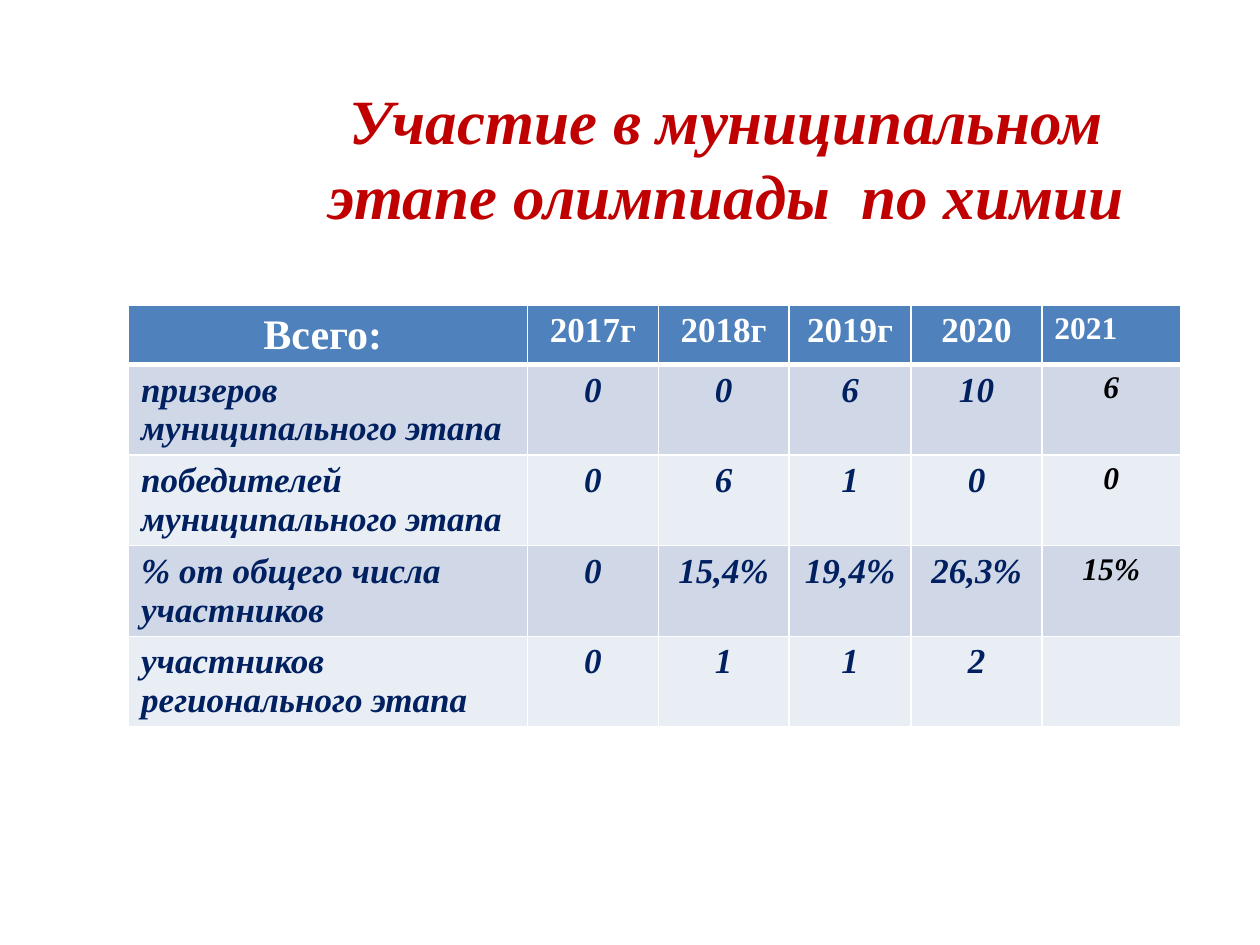
"""Build the slide on results of the chemistry olympiad."""
import pptx
import pptx.dml.color
import pptx.enum.text
import pptx.oxml
import pptx.oxml.ns
import pptx.util

Pt = pptx.util.Pt
ALIGN = pptx.enum.text.PP_ALIGN
NAVY, WHITE, BLACK = "002060", "FFFFFF", "000000"
HEAD = ["Всего: ", "2017г", "2018г", "2019г", "2020", "2021"]
ROWS = [
    ["призеров муниципального этапа", "0", "0", "6", "10", "6"],
    ["победителей муниципального этапа", "0", "6", "1", "0", "0"],
    ["% от общего числа участников", "0", "15,4%", "19,4%", "26,3%", "15%"],
    ["участников регионального этапа", "0", "1", "1", "2", ""],
]


def tint(code):
    return pptx.dml.color.RGBColor.from_string(code)


def write(frame, text, size=20, color=NAVY, italic=True, align=ALIGN.CENTER):
    par = frame.paragraphs[0]
    par.alignment = align
    if text:
        run = par.add_run()
        run.text = text
        font = run.font
    else:
        font = par.font
    font.name = "Times New Roman"
    font.size = Pt(size)
    font.bold = True
    font.italic = italic
    font.color.rgb = tint(color)


class Deck:
    """Hold the style and the current slide."""

    def __init__(self):
        self.show = pptx.Presentation()
        self.show.slide_width = Pt(720)
        self.show.slide_height = Pt(540)
        self.slide = self.show.slides.add_slide(self.show.slide_layouts[5])
        self.blue = "4F81BD"
        self.bands = ["D0D8E8", "E9EDF4"]

    def title(self, text, left, top, width, height):
        box = self.slide.shapes.title
        box.left, box.top = Pt(left), Pt(top)
        box.width, box.height = Pt(width), Pt(height)
        frame = box.text_frame
        frame.word_wrap = True
        frame.vertical_anchor = pptx.enum.text.MSO_ANCHOR.MIDDLE
        write(frame, text, size=36, color="C00000")

    def edge(self, cell, side, width):
        space = pptx.oxml.ns.nsdecls("a")
        line = pptx.oxml.parse_xml(
            f'<a:ln{side} {space} w="{Pt(width)}"><a:solidFill>'
            f'<a:srgbClr val="{WHITE}"/></a:solidFill></a:ln{side}>')
        cell._tc.get_or_add_tcPr().append(line)

    def cell(self, cell, text, fill, top=1, base=1, **style):
        for side, width in zip("LRTB", (1, 1, top, base)):
            self.edge(cell, side, width)
        cell.fill.solid()
        cell.fill.fore_color.rgb = tint(fill)
        write(cell.text_frame, text, **style)

    def table(self, left, top, cols, highs):
        grid = self.slide.shapes.add_table(
            len(highs), len(cols), Pt(left), Pt(top),
            Pt(sum(cols)), Pt(sum(highs))).table
        for col, width in zip(grid.columns, cols):
            col.width = Pt(width)
        for row, height in zip(grid.rows, highs):
            row.height = Pt(height)
        last = len(cols) - 1
        for c, text in enumerate(HEAD):
            size = {0: 24, last: 18}.get(c, 20)
            align = ALIGN.LEFT if c == last else ALIGN.CENTER
            self.cell(grid.cell(0, c), text, self.blue, base=3, size=size,
                      color=WHITE, italic=False, align=align)
        for r, row in enumerate(ROWS):
            for c, text in enumerate(row):
                style = {"size": 18, "color": BLACK} if c == last else {}
                if c == 0:
                    style["align"] = ALIGN.LEFT
                self.cell(grid.cell(r + 1, c), text, self.bands[r % 2],
                          top=1 if r else 3, **style)


def main():
    deck = Deck()
    deck.title("Участие в муниципальном этапе олимпиады  по химии",
               146, 21.6, 538, 136)
    deck.table(73.5, 174.5, [228, 74.7, 74.7, 69.8, 74.7, 79.2],
               [33] + [51.8] * len(ROWS))
    deck.show.save("out.pptx")


if __name__ == "__main__":
    main()
